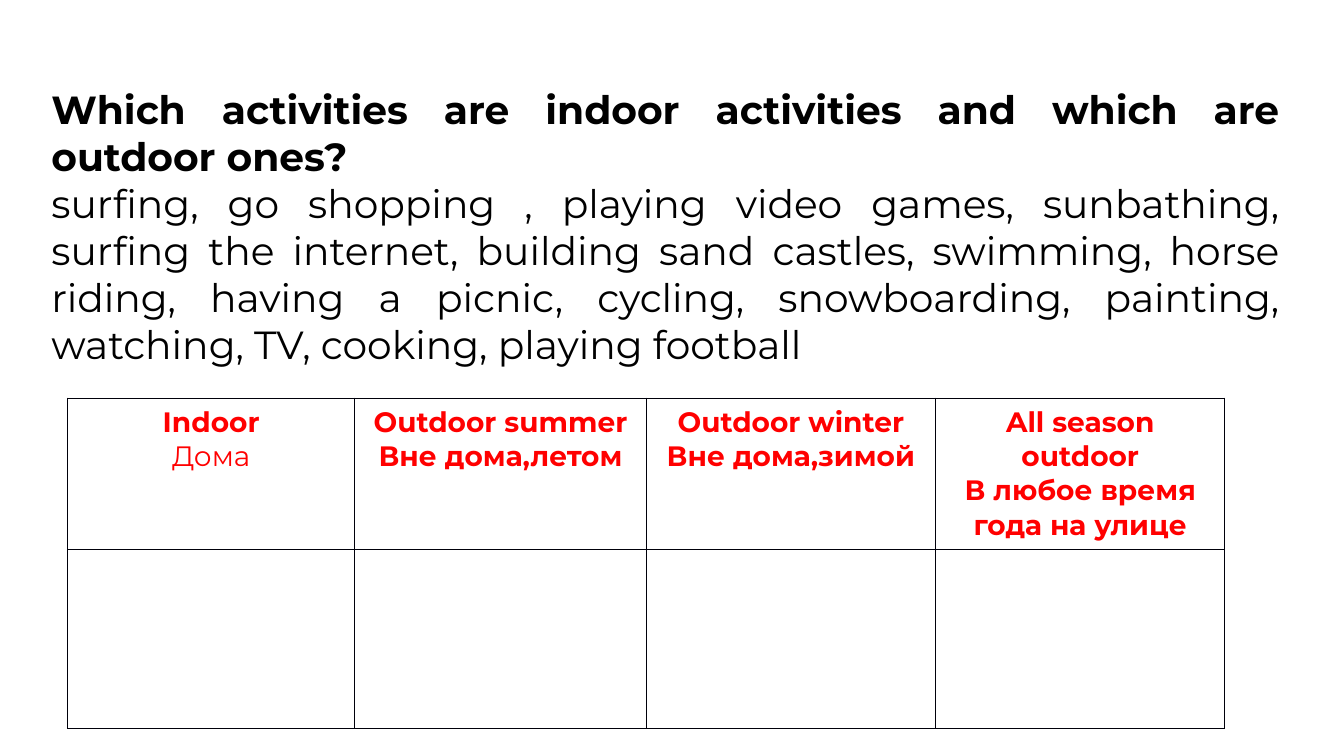
from lxml import etree
from pptx import Presentation
from pptx.dml.color import RGBColor
from pptx.enum import text as t
from pptx.oxml import ns
from pptx.util import Inches, Pt

BLACK = RGBColor(0x00, 0x00, 0x00)
RED = RGBColor(0xFF, 0x00, 0x00)
WHITE = RGBColor(0xFF, 0xFF, 0xFF)
BORDER = "00000A"


def write(paragraph, words, size=20, color=RED, bold=True, align=t.PP_ALIGN.CENTER):
    paragraph.alignment = align
    paragraph.space_before = Pt(0)
    run = paragraph.add_run()
    run.text = words
    run.font.name = "Montserrat"
    run.font.size = Pt(size)
    run.font.bold = bold
    run.font.color.rgb = color


def add_borders(cell):
    """Draw a thin line on all four sides, placed ahead of the cell's fill."""
    properties = cell._tc.get_or_add_tcPr()
    for position, side in enumerate(("lnL", "lnR", "lnT", "lnB")):
        line = etree.Element(ns.qn(f"a:{side}"), w=str(Pt(0.75)))
        fill = etree.SubElement(line, ns.qn("a:solidFill"))
        etree.SubElement(fill, ns.qn("a:srgbClr"), val=BORDER)
        properties.insert(position, line)


prs = Presentation()
prs.slide_width, prs.slide_height = Inches(13.33), Inches(7.5)
slide = prs.slides.add_slide(prs.slide_layouts[1])

# Question and the activities to sort
question = slide.shapes.title
activities = slide.placeholders[1]
for block, top, height, bold, words in (
    (question, 0.85, 0.93, True,
     "Which activities are indoor activities and which are outdoor ones?"),
    (activities, 1.78, 1.87, False,
     "surfing, go shopping , playing video games, sunbathing, surfing the internet, "
     "building sand castles, swimming, horse riding, having a picnic, cycling, "
     "snowboarding, painting, watching, TV, cooking, playing football"),
):
    block.left, block.top = Inches(0.41), Inches(top)
    block.width, block.height = Inches(12.38), Inches(height)
    frame = block.text_frame
    frame.word_wrap = True
    frame.auto_size = t.MSO_AUTO_SIZE.NONE
    frame.vertical_anchor = t.MSO_ANCHOR.TOP
    frame.margin_top = frame.margin_bottom = 0
    write(frame.paragraphs[0], words, size=28, color=BLACK, bold=bold,
          align=t.PP_ALIGN.JUSTIFY)

unbulleted = activities.text_frame.paragraphs[0]._p.get_or_add_pPr()
unbulleted.set("marL", "0")
unbulleted.set("indent", "0")
etree.SubElement(unbulleted, ns.qn("a:buNone"))

# Sorting table: English and Russian headings over empty answer cells
headings = (
    ("Indoor", "Дома"),
    ("Outdoor summer", "Вне дома,летом"),
    ("Outdoor winter", "Вне дома,зимой"),
    ("All season outdoor", "В любое время года на улице"),
)
column_widths = (2.85, 2.89, 2.87, 2.87)
row_heights = (1.44, 1.78)
sorting = slide.shapes.add_table(
    len(row_heights), len(headings), Inches(0.67), Inches(3.95),
    Inches(sum(column_widths)), Inches(sum(row_heights))).table
sorting.first_row = sorting.horz_banding = False
for column, width in zip(sorting.columns, column_widths):
    column.width = Inches(width)
for row, height in zip(sorting.rows, row_heights):
    row.height = Inches(height)

for cell in sorting.iter_cells():
    cell.fill.solid()
    cell.fill.fore_color.rgb = WHITE
    cell.margin_left = cell.margin_right = Inches(0.08)
    cell.margin_top = cell.margin_bottom = Inches(0.07)
    add_borders(cell)

for column, (english, russian) in enumerate(headings):
    heading = sorting.cell(0, column).text_frame
    write(heading.paragraphs[0], english)
    write(heading.add_paragraph(), russian, bold=column > 0)

prs.save("out.pptx")
